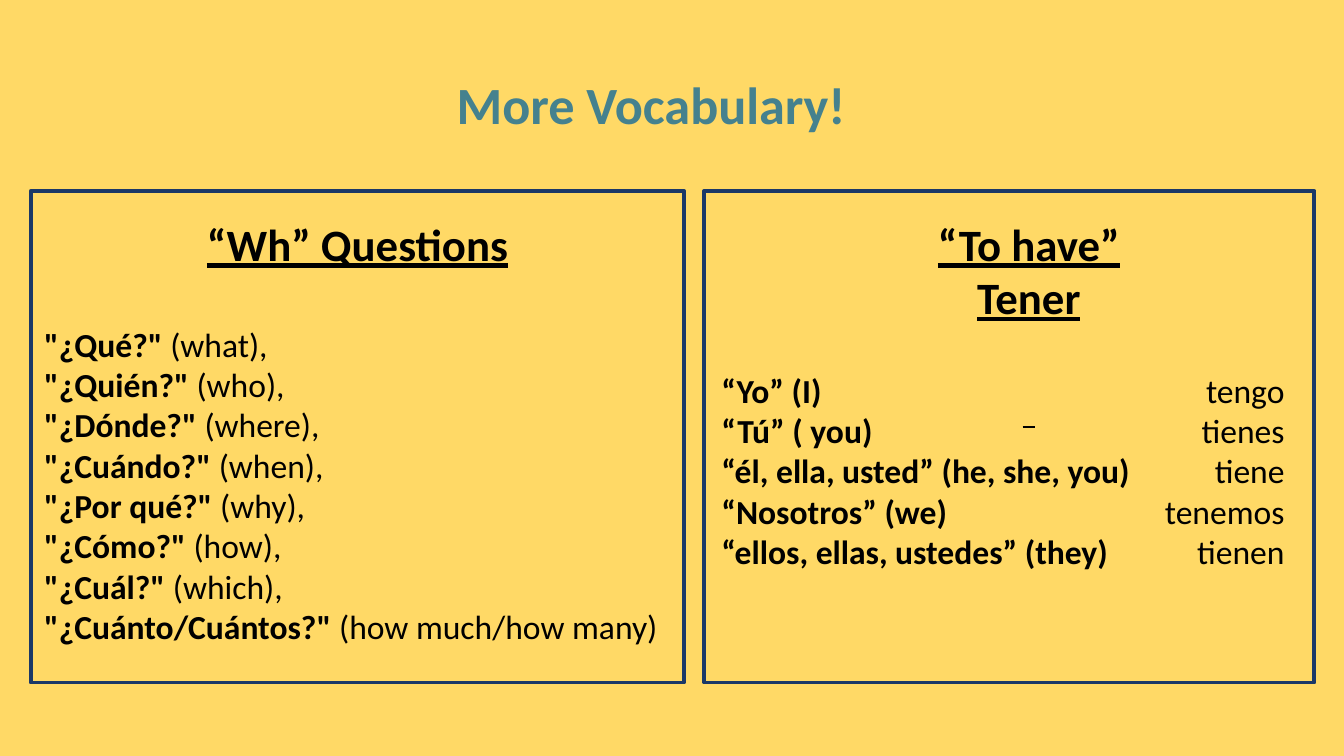
from pptx import Presentation
from pptx.dml.color import RGBColor
from pptx.enum.shapes import MSO_SHAPE
from pptx.enum.text import PP_ALIGN
from pptx.oxml.ns import qn
from pptx.util import Inches, Pt
from lxml import etree

LEFT, CENTER = PP_ALIGN.LEFT, PP_ALIGN.CENTER
RECTANGLE = MSO_SHAPE.RECTANGLE

# Content
TITLE = "More Vocabulary!"
QUESTIONS_HEADING = ["“Wh” Questions"]
TENER_HEADING = ["“To have”", "Tener"]
QUESTIONS = [
    ("¿Qué?", "(what),"),
    ("¿Quién?", "(who),"),
    ("¿Dónde?", "(where),"),
    ("¿Cuándo?", "(when),"),
    ("¿Por qué?", "(why),"),
    ("¿Cómo?", "(how),"),
    ("¿Cuál?", "(which),"),
    ("¿Cuánto/Cuántos?", "(how much/how many)"),
]
TENER_FORMS = [
    ("“Yo” (I)", "tengo"),
    ("“Tú” ( you)", "tienes"),
    ("“él, ella, usted” (he, she, you)", "tiene"),
    ("“Nosotros” (we)", "tenemos"),
    ("“ellos, ellas, ustedes” (they)", "tienen"),
]

# Layout and formats
SLIDE_WIDTH = 10
SLIDE_HEIGHT = SLIDE_WIDTH * 9 / 16
PANELS = [(0.23, 1.42, 4.86, 3.66), (5.24, 1.42, 4.54, 3.66)]
VERB_TAB = 4.19
HEADING_GAP = Pt(28.8)
BACKGROUND, NAVY, TEAL, BLACK = "FFD966", "1B3867", "45818E", "000000"
TITLE_FORMAT = {"name": "Calibri", "size": Pt(28), "bold": True}
HEADING_FORMAT = {"name": "Calibri", "size": Pt(24), "bold": True, "underline": True}
DASH_FORMAT = {**HEADING_FORMAT, "name": "Arial"}
TERM_FORMAT = {"name": "Calibri", "size": Pt(18), "bold": True}
MEANING_FORMAT = {**TERM_FORMAT, "bold": False}


def color(value):
    return RGBColor.from_string(value)


def add_run(paragraph, text, formats, fill):
    run = paragraph.add_run()
    run.text = text
    run.font.color.rgb = color(fill)
    for name, value in formats.items():
        setattr(run.font, name, value)


def add_text(slide, box, lines, fill=BLACK):
    """Each line is (alignment, [(text, formats), ...])."""
    shape = slide.shapes.add_textbox(*map(Inches, box))
    frame = shape.text_frame
    frame.word_wrap = True
    for index, (alignment, runs) in enumerate(lines):
        paragraph = frame.add_paragraph() if index else frame.paragraphs[0]
        paragraph.alignment = alignment
        for text, formats in runs:
            add_run(paragraph, text, formats, fill)
    return frame.paragraphs


def heading_lines(texts):
    return [(CENTER, [(text, HEADING_FORMAT)]) for text in texts]


def pair_lines(pairs):
    return [(LEFT, [(term, TERM_FORMAT), (meaning, MEANING_FORMAT)])
            for term, meaning in pairs]


def add_right_tab(paragraph, position):
    properties = paragraph._p.get_or_add_pPr()
    tabs = etree.SubElement(properties, qn("a:tabLst"))
    etree.SubElement(tabs, qn("a:tab"), pos=str(Inches(position)), algn="r")


presentation = Presentation()
presentation.slide_width = Inches(SLIDE_WIDTH)
presentation.slide_height = Inches(SLIDE_HEIGHT)
slide = presentation.slides.add_slide(presentation.slide_layouts[6])
slide.background.fill.solid()
slide.background.fill.fore_color.rgb = color(BACKGROUND)

# Heading of the verb panel, closed by a short underline
dash_line = (CENTER, [(" ", DASH_FORMAT)])
paragraphs = add_text(slide, (6.32, 1.56, 2.67, 1.72),
                      heading_lines(TENER_HEADING) + [dash_line])
paragraphs[-1].space_before = HEADING_GAP

# Question words
questions = [(f'"{term}"\u00a0', meaning) for term, meaning in QUESTIONS]
paragraphs = add_text(slide, (0.23, 1.56, 4.86, 3.33),
                      heading_lines(QUESTIONS_HEADING) + pair_lines(questions))
paragraphs[len(QUESTIONS_HEADING)].space_before = HEADING_GAP

# Forms of tener, with the verbs on a right tab
forms = [(pronoun, f"\t{verb}") for pronoun, verb in TENER_FORMS]
for paragraph in add_text(slide, (5.27, 2.7, 4.47, 1.62), pair_lines(forms)):
    add_right_tab(paragraph, VERB_TAB)

# Framed panels
for panel in PANELS:
    shape = slide.shapes.add_shape(RECTANGLE, *map(Inches, panel))
    shape.shadow.inherit = False
    shape.fill.background()
    shape.line.color.rgb = color(NAVY)
    shape.line.width = Pt(2)

# Title
add_text(slide, (3.3, 0.49, 3.43, 0.57), [(LEFT, [(TITLE, TITLE_FORMAT)])], TEAL)

presentation.save("out.pptx")
